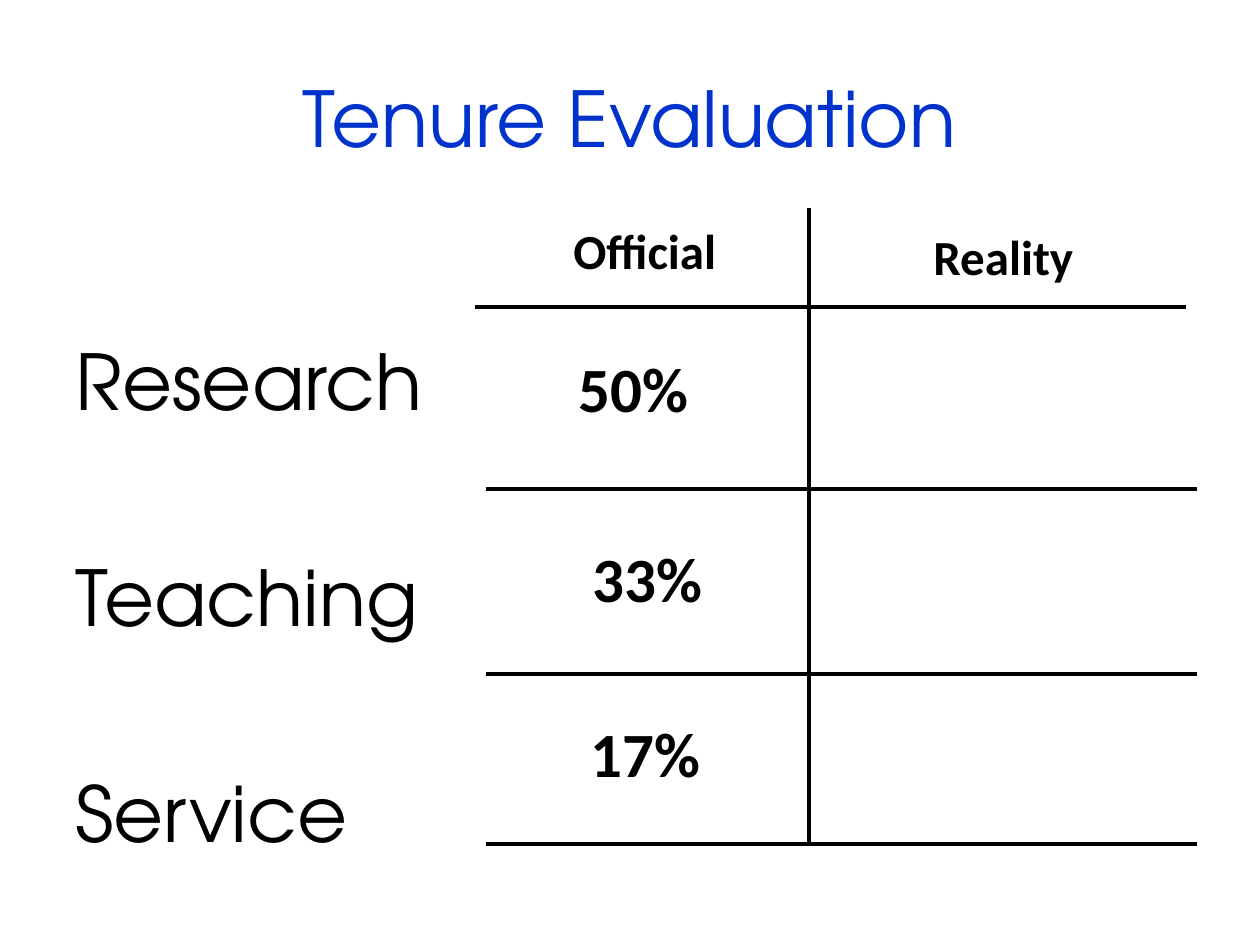
from lxml import etree
from pptx import Presentation
from pptx import util as u
from pptx.dml.color import RGBColor
from pptx.enum import shapes, text
from pptx.oxml.ns import qn

PX = 914400 // 126
BLUE = RGBColor(0x00, 0x33, 0xCC)
BLACK = RGBColor(0x00, 0x00, 0x00)
DISPLAY, PLAIN = "TeX Gyre Adventor", "Calibri"

TITLE = "Tenure Evaluation"
CRITERIA = ["Research", "Teaching", "Service"]
HEADINGS = [("Official", 561, 214, 171), ("Reality", 921, 220, 168)]
SHARES = [("50%", 566, 343), ("33%", 580, 533), ("17%", 578, 708)]

RULE_WIDTH = 711
RULES = [(475, 307), (486, 489), (486, 674), (486, 844)]
DIVIDER = (809, 208, 809, 844)


def add_text(slide, box, lines, size, font, color=BLACK, bold=False, wrap=False):
    frame = slide.shapes.add_textbox(*(n * PX for n in box)).text_frame
    frame.word_wrap = wrap
    frame.text = "\n".join(lines)
    for paragraph in frame.paragraphs:
        style = paragraph.runs[0].font
        style.size, style.name, style.bold = u.Pt(size), font, bold
        style.color.rgb = color
    return frame


def add_rule(slide, ends):
    rule = slide.shapes.add_connector(
        shapes.MSO_CONNECTOR.STRAIGHT, *(n * PX for n in ends))
    rule.line.color.rgb = BLACK
    rule.line.width = u.Pt(2.25)
    etree.SubElement(rule._element.spPr, qn("a:effectLst"))


def main():
    prs = Presentation()
    prs.slide_width, prs.slide_height = u.Inches(10), u.Inches(7.5)
    slide = prs.slides.add_slide(prs.slide_layouts[6])

    title = add_text(slide, (63, 38, 1134, 158), [TITLE], 44, DISPLAY, BLUE, wrap=True)
    title.vertical_anchor = text.MSO_ANCHOR.MIDDLE
    title.paragraphs[0].alignment = text.PP_ALIGN.CENTER

    criteria = add_text(slide, (63, 220, 1134, 624), CRITERIA, 44, DISPLAY, wrap=True)
    criteria.margin_top = 114 * PX
    for paragraph in criteria.paragraphs[1:]:
        paragraph.space_before = u.Pt(70.4)

    for left, y in RULES:
        add_rule(slide, (left, y, left + RULE_WIDTH, y))
    add_rule(slide, DIVIDER)

    for heading, left, top, width in HEADINGS:
        add_text(slide, (left, top, width, 72), [heading], 28, PLAIN, bold=True)
    for share, left, top in SHARES:
        add_text(slide, (left, top, 136, 89), [share], 36, PLAIN, bold=True)

    prs.save("out.pptx")


if __name__ == "__main__":
    main()
